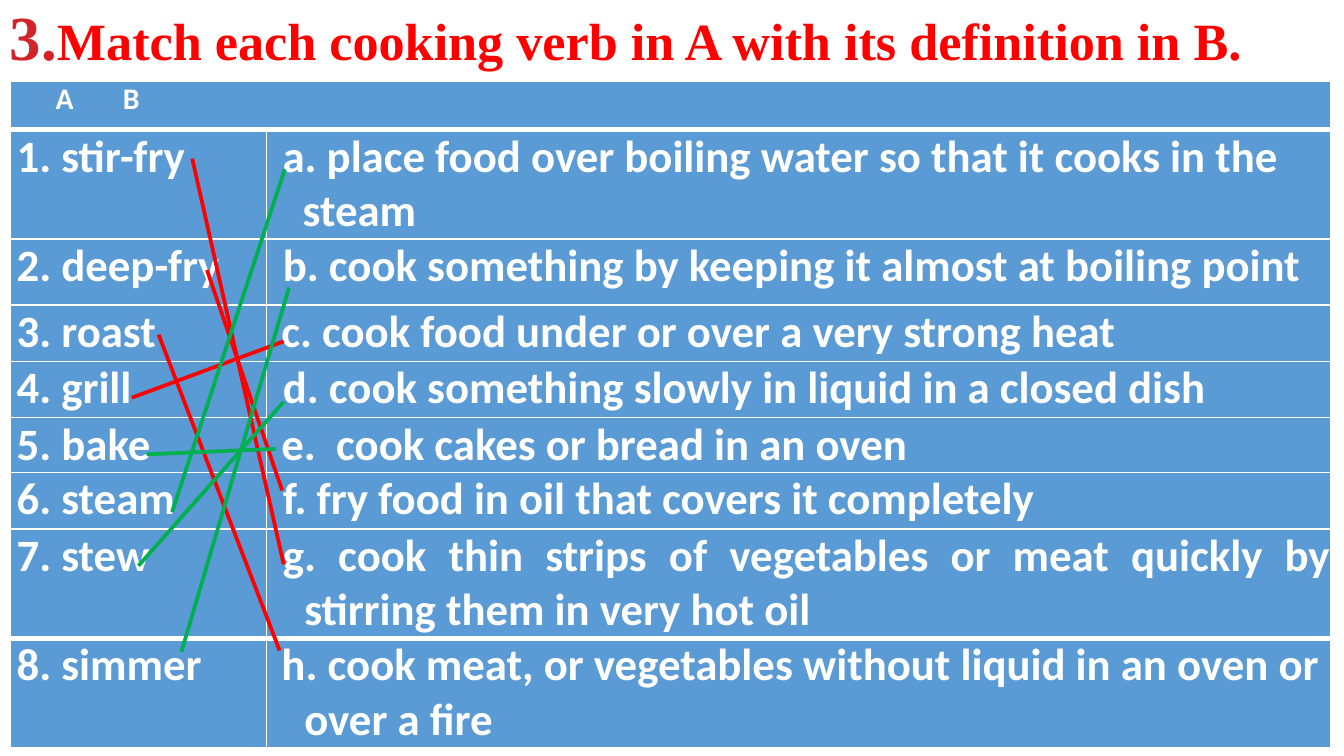
"""Build a slide that matches cooking verbs with their definitions."""
from pptx import Presentation
from pptx.dml.color import RGBColor
from pptx.enum.shapes import MSO_CONNECTOR
from pptx.enum.text import MSO_ANCHOR, MSO_AUTO_SIZE, PP_ALIGN
from pptx.oxml.ns import qn
from pptx.util import Pt
from lxml import etree

STRAIGHT = MSO_CONNECTOR.STRAIGHT
TOP = MSO_ANCHOR.TOP
FIT_SHAPE = MSO_AUTO_SIZE.SHAPE_TO_FIT_TEXT
LEFT, JUSTIFY = PP_ALIGN.LEFT, PP_ALIGN.JUSTIFY
WHITE, BLUE, RED, GREEN = "FFFFFF", "5B9BD5", "FF0000", "00B050"


def add_xml(parent, tag, **attrs):
    el = etree.SubElement(parent, qn(tag))
    for name, value in attrs.items():
        el.set(name, str(value))
    return el


def add_run(p, text, size, font, color):
    r = p.add_run()
    r.text = text
    r.font.size = Pt(size)
    r.font.name = font
    r.font.bold = True
    r.font.color.rgb = RGBColor.from_string(color)


prs = Presentation()
prs.slide_width, prs.slide_height = Pt(720), Pt(405)
s = prs.slides.add_slide(prs.slide_layouts[6])

# text, left margin, first-line indent, alignment
HEADER = ("A\tB", 24.5, 0, LEFT)
VERBS = ["stir-fry", "deep-fry", "roast", "grill", "bake", "steam", "stew", "simmer"]
DEFINITIONS = [
    ("a. place food over boiling water so that it cooks in the steam", 19.4, -10.8, LEFT),
    ("b. cook something by keeping it almost at boiling point", 20.2, -11.5, LEFT),
    ("c. cook food under or over a very strong heat", 18.7, -10.8, LEFT),
    ("d. cook something slowly in liquid in a closed dish", 20.2, -11.5, LEFT),
    ("e.  cook cakes or bread in an oven", 8, 0, LEFT),
    ("f. fry food in oil that covers it completely", 17.3, -8.6, LEFT),
    ("g. cook thin strips of vegetables or meat quickly by stirring them in very hot oil",
     20.2, -11.5, JUSTIFY),
    ("h. cook meat, or vegetables without liquid in an oven or over a fire", 20.2, -12.2, LEFT),
]
ROW_HEIGHTS = [26, 35.3, 35.3, 30.2, 30.2, 18.7, 30.2, 42.5, 42.5]

rows = [[HEADER, None]]
for i, (verb, definition) in enumerate(zip(VERBS, DEFINITIONS), 1):
    rows.append([(f"{i}. {verb}", 3.6, 0, LEFT), definition])
last = len(rows) - 1

frame = s.shapes.add_table(len(rows), 2, Pt(5.3), Pt(43.5), Pt(707.5), Pt(354))
table = frame.table
table.horz_banding = False
for col, width in zip(table.columns, (137.5, 570)):
    col.width = Pt(width)
for row, height in zip(table.rows, ROW_HEIGHTS):
    row.height = Pt(height)
frame.height = Pt(354)
table.cell(0, 0).merge(table.cell(0, 1))

for i, row in enumerate(rows):
    for j, content in enumerate(row):
        cell = table.cell(i, j)
        cell.margin_left = cell.margin_right = cell.margin_top = cell.margin_bottom = 0
        cell.vertical_anchor = TOP
        tcPr = cell._tc.get_or_add_tcPr()
        widths = {"L": 1, "R": 1, "T": 3 if i in (1, last) else 1,
                  "B": 3 if i in (0, last - 1) else 1}
        for side, width in widths.items():
            ln = add_xml(tcPr, f"a:ln{side}", w=Pt(width))
            add_xml(add_xml(ln, "a:solidFill"), "a:srgbClr", val=WHITE)
        cell.fill.solid()
        cell.fill.fore_color.rgb = RGBColor.from_string(BLUE)
        if content is None:
            continue
        text, margin, indent, align = content
        p = cell.text_frame.paragraphs[0]
        p.alignment = align
        p.space_before = Pt(3.4 if i else 7.5)
        pPr = p._p.get_or_add_pPr()
        pPr.set("marL", str(Pt(margin)))
        pPr.set("indent", str(Pt(indent)))
        if i == 0:
            add_xml(add_xml(pPr, "a:tabLst"), "a:tab", pos=Pt(131.8), algn="l")
        add_run(p, text, 24 if i else 16, "Calibri", WHITE)

title = s.shapes.add_textbox(0, 0, Pt(707), Pt(38.2))
tf = title.text_frame
tf.word_wrap = False
tf.auto_size = FIT_SHAPE
tf.margin_left = tf.margin_right = Pt(5.3)
tf.margin_top = tf.margin_bottom = Pt(2.5)
p = tf.paragraphs[0]
p.alignment = JUSTIFY
p.line_spacing = 1.05
p.space_before = Pt(4.2)
pPr = p._p.get_or_add_pPr()
pPr.set("marL", str(Pt(18)))
pPr.set("indent", str(Pt(-18)))
add_xml(add_xml(pPr, "a:buClr"), "a:srgbClr", val="D2232A")
add_xml(pPr, "a:buSzPct", val=120000)
add_xml(pPr, "a:buFont", typeface="Times New Roman")
add_xml(pPr, "a:buAutoNum", type="arabicPeriod", startAt=3)
add_xml(add_xml(pPr, "a:tabLst"), "a:tab", pos=Pt(21.6), algn="l")
add_run(p, "Match each cooking verb in A with its definition in B.", 28, "Times New Roman", RED)

MATCHES = [
    (103, 85, 152, 302.4, RED),
    (110.9, 144.7, 151.2, 262.8, RED),
    (85, 179.3, 149.8, 348.5, RED),
    (78.5, 243.4, 147.6, 240.5, GREEN),
    (70.6, 213.1, 152, 182.9, RED),
    (92.2, 274.3, 152.6, 90.7, GREEN),
    (74.2, 303.1, 152, 215.3, GREEN),
    (97.2, 349.2, 154.8, 154.1, GREEN),
]
for x1, y1, x2, y2, color in MATCHES:
    sp = s.shapes.add_connector(STRAIGHT, Pt(x1), Pt(y1), Pt(x2), Pt(y2))
    sp.line.width = Pt(2)
    sp.line.color.rgb = RGBColor.from_string(color)
    add_xml(sp._element.spPr, "a:effectLst")

prs.save("out.pptx")
